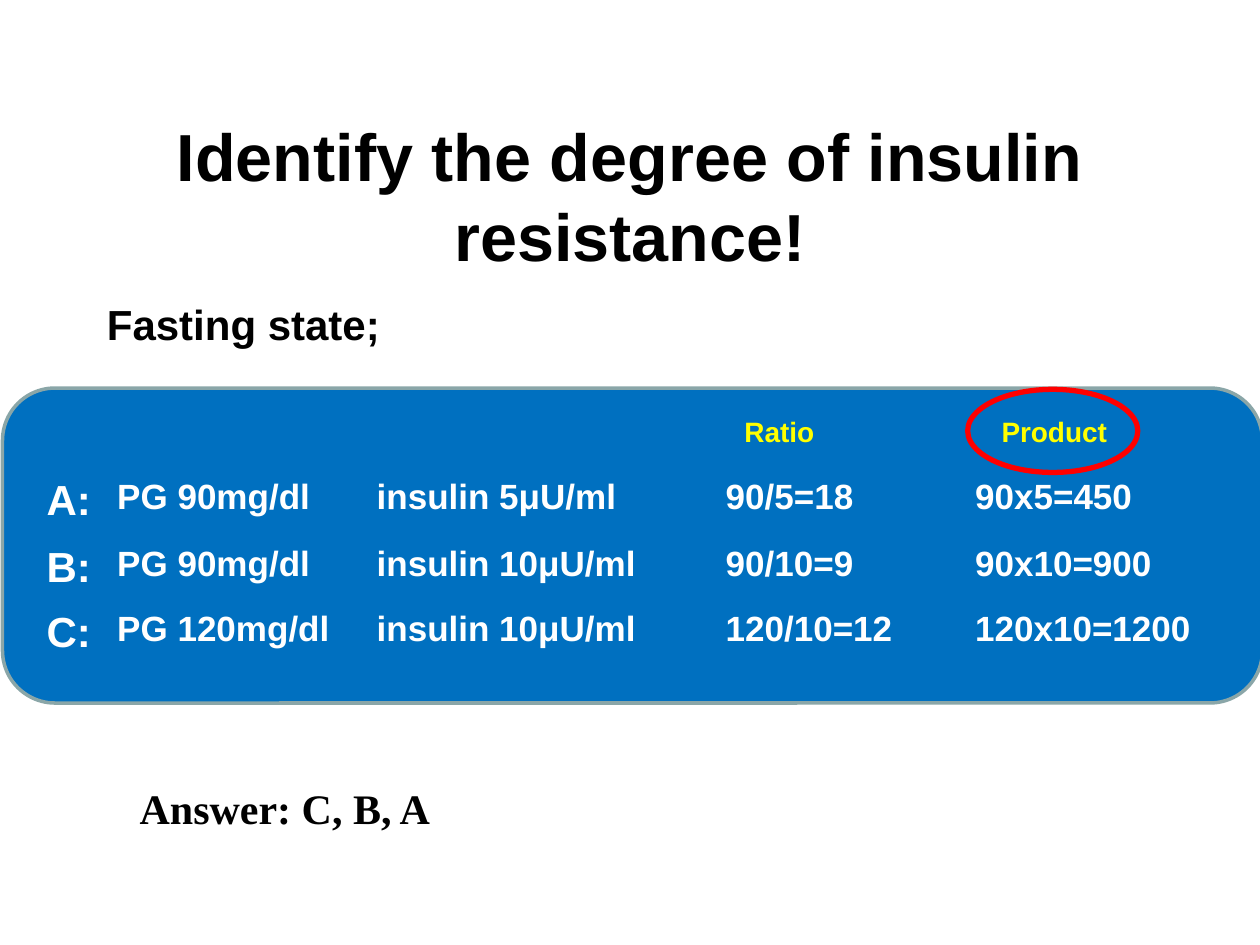
from lxml.etree import SubElement
from pptx import Presentation
from pptx.dml.color import RGBColor
from pptx.enum.shapes import MSO_SHAPE
from pptx.enum.text import MSO_ANCHOR, PP_ALIGN
from pptx.oxml.ns import qn
from pptx.util import Inches, Pt

COLORS = {
    "text": "000000",
    "panel": "0070C0",
    "panel_line": "8AA6A8",
    "cell": "FFFFFF",
    "heading": "FFFF00",
    "highlight": "FF0000",
}


def color(name):
    return RGBColor.from_string(COLORS[name])


class SlideBuilder:
    """Holds the shared style and the slide being filled."""

    font = "Arial"

    def __init__(self, page):
        self.page = page

    def style(self, paragraph, size, fill, font=None):
        for span in paragraph.runs:
            span.font.name = font or self.font
            span.font.size = Pt(size)
            span.font.bold = True
            span.font.color.rgb = color(fill)

    def text(self, place, words, size, fill="text", font=None, wrap=True,
             align=PP_ALIGN.LEFT, anchor=MSO_ANCHOR.TOP):
        box = self.page.shapes.add_textbox(*map(Inches, place))
        frame = box.text_frame
        frame.word_wrap = wrap
        frame.vertical_anchor = anchor
        frame.text = words
        paragraph = frame.paragraphs[0]
        paragraph.alignment = align
        self.style(paragraph, size, fill, font)
        return paragraph

    def shape(self, kind, place, line, width, fill=None):
        shape = self.page.shapes.add_shape(kind, *map(Inches, place))
        shape.shadow.inherit = False
        shape.line.color.rgb = color(line)
        shape.line.width = Pt(width)
        if fill:
            shape.fill.solid()
            shape.fill.fore_color.rgb = color(fill)
        else:
            shape.fill.background()

    def table(self, place, widths, heights, rows):
        """Add a table without fills or borders; its first column is larger."""
        table = self.page.shapes.add_table(
            len(rows), len(widths), *map(Inches, place)).table
        table.first_row = table.horz_banding = False
        for column, width in zip(table.columns, widths):
            column.width = Inches(width)
        for row, height, values in zip(table.rows, heights, rows):
            row.height = Inches(height)
            for index, (cell, value) in enumerate(zip(row.cells, values)):
                cell.text_frame.text = value
                self.style(cell.text_frame.paragraphs[0],
                           20 if index else 24, "cell")
                properties = cell._tc.get_or_add_tcPr()
                for side in ("a:lnL", "a:lnR", "a:lnT", "a:lnB"):
                    border = SubElement(properties, qn(side))
                    SubElement(border, qn("a:noFill"))
                cell.fill.background()


def add_tab_stop(paragraph, position):
    tabs = SubElement(paragraph._p.get_or_add_pPr(), qn("a:tabLst"))
    SubElement(tabs, qn("a:tab"), pos=str(Inches(position)), algn="l")


def main():
    deck = Presentation()
    deck.slide_width, deck.slide_height = Inches(10), Inches(7.5)
    slide = SlideBuilder(deck.slides.add_slide(deck.slide_layouts[6]))

    slide.text((0.75, 2.32, 2.39, 0.51), "Fasting state;", 24, wrap=False)
    slide.shape(MSO_SHAPE.ROUNDED_RECTANGLE, (0.02, 3.08, 10, 2.5),
                "panel_line", 2, "panel")
    slide.table(
        (0.27, 3.74, 9.75, 1.58),
        (0.56, 2.06, 2.77, 1.98, 2.38),
        (0.53, 0.52, 0.53),
        (
            ("A:", "PG 90mg/dl", "insulin 5μU/ml", "90/5=18", "90x5=450"),
            ("B:", "PG 90mg/dl", "insulin 10μU/ml", "90/10=9", "90x10=900"),
            ("C:", "PG 120mg/dl", "insulin 10μU/ml", "120/10=12", "120x10=1200"),
        ),
    )
    slide.text((1.01, 6.16, 7.04, 0.5), "Answer: C, B, A", 24,
               font="Times New Roman")
    headings = slide.text((5.81, 3.24, 3.38, 0.37), "Ratio \tProduct", 16,
                          "heading")
    add_tab_stop(headings, 2.04)
    slide.text((0, 0.92, 10, 1.25),
               "Identify the degree of insulin resistance!", 38,
               align=PP_ALIGN.CENTER, anchor=MSO_ANCHOR.MIDDLE)
    slide.shape(MSO_SHAPE.OVAL, (7.68, 3.09, 1.35, 0.66), "highlight", 3)

    deck.save("out.pptx")


if __name__ == "__main__":
    main()
